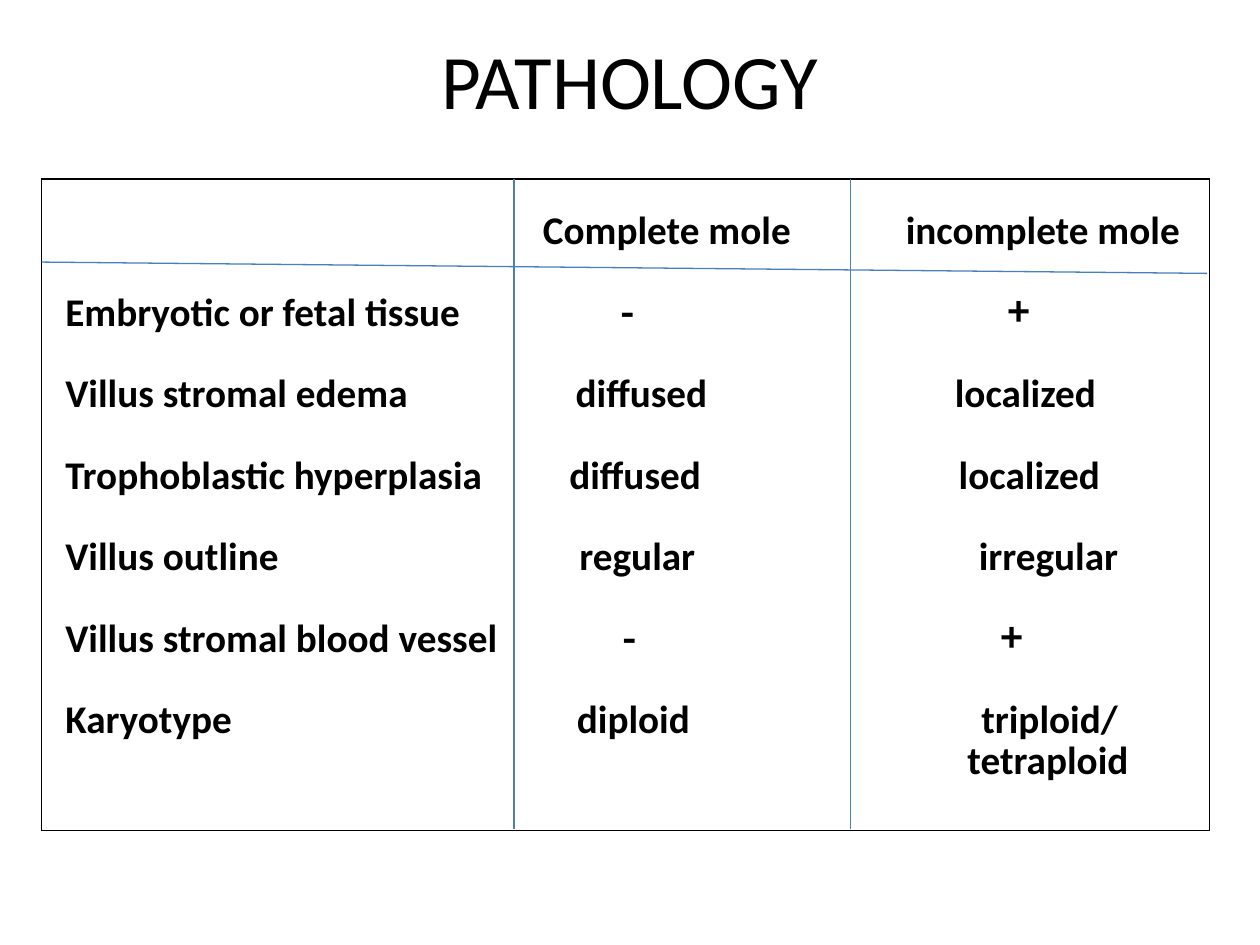
from typing import NamedTuple

from lxml import etree
from pptx import Presentation
from pptx.dml.color import RGBColor
from pptx.enum import shapes, text
from pptx.oxml import ns
from pptx.util import Inches, Length, Pt

BLACK = RGBColor(0x00, 0x00, 0x00)
RULE_BLUE = RGBColor(0x4B, 0x7E, 0xBC)
BODY_FONT = "Calibri"
SYMBOL_FONT = "Noto Sans CJK SC"

FRAME_LEFT, FRAME_TOP, FRAME_WIDTH, FRAME_HEIGHT = 0.33, 1.42, 9.27, 5.17
FRAME_BOTTOM = 6.58
TEXT_LEFT = 0.52  # where tab positions are measured from
LINE_HEIGHT = Pt(19)
ROW_GAP = Pt(27.6)
CONTINUATION_GAP = Pt(4.4)


class Entry(NamedTuple):
    left: float
    wording: str


class Feature(NamedTuple):
    label: str
    entries: tuple[Entry, ...]
    gap: Length = ROW_GAP


FEATURES = [
    Feature("", (Entry(4.31, "Complete mole"), Entry(7.19, "incomplete mole")), Pt(0)),
    Feature("Embryotic or fetal tissue", (Entry(4.93, "-"), Entry(8.0, "+"))),
    Feature("Villus stromal edema", (Entry(4.57, "diffused"), Entry(7.58, "localized"))),
    Feature("Trophoblastic hyperplasia", (Entry(4.52, "diffused"), Entry(7.61, "localized"))),
    Feature("Villus outline", (Entry(4.6, "regular"), Entry(7.77, "irregular"))),
    Feature("Villus stromal blood vessel", (Entry(4.94, "-"), Entry(7.94, "+"))),
    Feature("Karyotype", (Entry(4.58, "diploid"), Entry(7.79, "triploid/"))),
    Feature("", (Entry(7.68, "tetraploid"),), CONTINUATION_GAP),
]


def add_title(slide, wording: str) -> None:
    box = slide.shapes.add_textbox(Inches(0.5), Inches(0), Inches(9), Inches(1.25))
    frame = box.text_frame
    frame.word_wrap = True
    frame.vertical_anchor = text.MSO_ANCHOR.MIDDLE
    frame.text = wording
    heading = frame.paragraphs[0]
    heading.alignment = text.PP_ALIGN.CENTER
    font = heading.runs[0].font
    font.name, font.size = BODY_FONT, Pt(44)
    font.color.rgb = BLACK


def add_tab_stops(paragraph, lefts: list[float]) -> None:
    stops = etree.SubElement(paragraph._p.get_or_add_pPr(), ns.qn("a:tabLst"))
    for left in lefts:
        etree.SubElement(stops, ns.qn("a:tab"),
                         pos=str(Inches(left - TEXT_LEFT)), algn="l")


def add_body_run(paragraph, wording: str) -> None:
    run = paragraph.add_run()
    run.text = wording
    font = run.font
    font.name = SYMBOL_FONT if wording.strip() in ("-", "+") else BODY_FONT
    font.size, font.bold = Pt(22.4), True
    font.color.rgb = BLACK


def add_comparison(slide, features: list[Feature]) -> None:
    box = slide.shapes.add_textbox(Inches(0.42), Inches(1.69), Inches(9.08), Inches(5.03))
    frame = box.text_frame
    frame.word_wrap = True
    frame.margin_right = 0
    for index, feature in enumerate(features):
        row = frame.add_paragraph() if index else frame.paragraphs[0]
        row.line_spacing = LINE_HEIGHT
        row.space_before = feature.gap
        add_tab_stops(row, [entry.left for entry in feature.entries])
        if feature.label:
            add_body_run(row, feature.label)
        for entry in feature.entries:
            add_body_run(row, "\t" + entry.wording)


def add_frame(slide) -> None:
    """Draw the single-cell table that borders the comparison."""
    table = slide.shapes.add_table(
        1, 1, Inches(FRAME_LEFT), Inches(FRAME_TOP),
        Inches(FRAME_WIDTH), Inches(FRAME_HEIGHT)).table
    table.first_row = table.horz_banding = False
    cell = table.cell(0, 0)
    properties = cell._tc.get_or_add_tcPr()
    for side in ("lnL", "lnR", "lnT", "lnB"):
        border = etree.SubElement(properties, ns.qn(f"a:{side}"), w=str(Pt(1)))
        fill = etree.SubElement(border, ns.qn("a:solidFill"))
        etree.SubElement(fill, ns.qn("a:srgbClr"), val=str(BLACK))
    cell.fill.background()


def add_rule(slide, x1: float, y1: float, x2: float, y2: float) -> None:
    rule = slide.shapes.add_connector(
        shapes.MSO_CONNECTOR.STRAIGHT, Inches(x1), Inches(y1), Inches(x2), Inches(y2))
    rule.line.color.rgb = RULE_BLUE
    rule.line.width = Pt(0.75)
    etree.SubElement(rule._element.spPr, ns.qn("a:effectLst"))


def main() -> None:
    deck = Presentation()
    deck.slide_width, deck.slide_height = Inches(10), Inches(7.5)
    slide = deck.slides.add_slide(deck.slide_layouts[6])
    add_title(slide, "PATHOLOGY")
    add_comparison(slide, FEATURES)
    add_frame(slide)
    add_rule(slide, FRAME_LEFT, 2.08, 9.58, 2.17)
    for column_edge in (6.75, 4.08):
        add_rule(slide, column_edge, FRAME_TOP, column_edge, FRAME_BOTTOM)
    deck.save("out.pptx")


if __name__ == "__main__":
    main()
